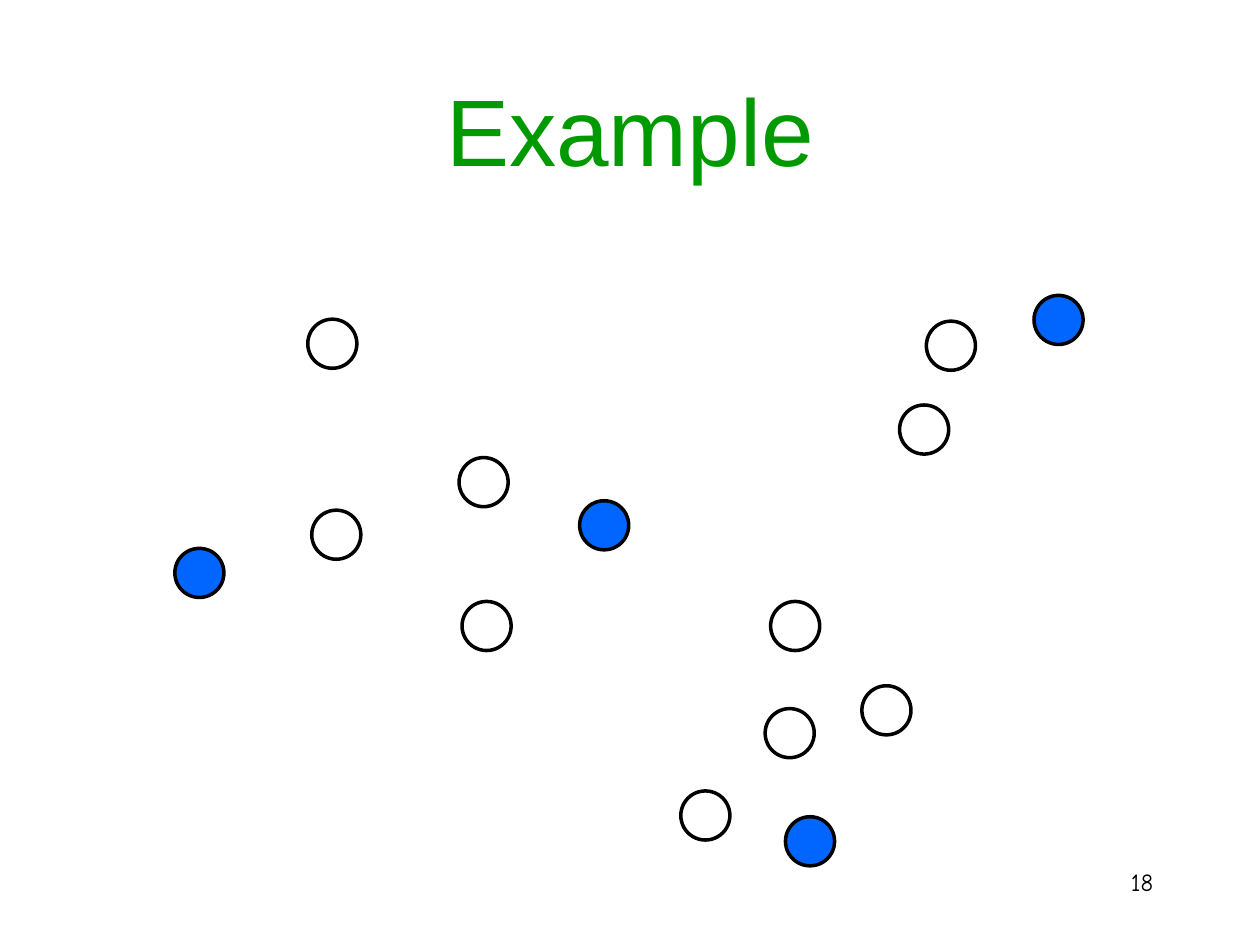
from dataclasses import dataclass

from pptx import Presentation
from pptx.dml.color import RGBColor
from pptx.enum.shapes import MSO_SHAPE
from pptx.enum.text import MSO_ANCHOR, PP_ALIGN
from pptx.util import Cm, Pt

TITLE = "Example"
PAGE_NUMBER = "18"

# Centres of the points, in centimetres
FILLED_POINTS = [(12.18, 10.59), (4.02, 11.55), (16.33, 16.96), (21.34, 6.45)]
OPEN_POINTS = [
    (14.22, 16.44), (19.17, 6.97), (17.87, 14.32), (16.03, 12.62), (15.92, 14.78),
    (6.70, 6.93), (9.75, 9.72), (9.81, 12.62), (18.63, 8.66), (6.78, 10.78),
]
DIAMETER = 0.99


@dataclass(frozen=True)
class Theme:
    background: RGBColor = RGBColor(0xFF, 0xFF, 0xFF)
    title: RGBColor = RGBColor(0x00, 0x99, 0x00)
    ink: RGBColor = RGBColor(0x00, 0x00, 0x00)
    point: RGBColor = RGBColor(0x00, 0x66, 0xFF)
    title_font: str = "Arial"
    number_font: str = "Comic Neue"
    title_size: int = 54
    number_size: int = 14
    outline: int = 2


THEME = Theme()


def add_text(slide, text, box, *, font, size, color, align, anchor=MSO_ANCHOR.TOP):
    """Add a text box; box is left, top, width, height in centimetres."""
    frame = slide.shapes.add_textbox(*map(Cm, box)).text_frame
    frame.word_wrap = True
    frame.vertical_anchor = anchor
    paragraph = frame.paragraphs[0]
    paragraph.alignment = align
    run = paragraph.add_run()
    run.text = text
    run.font.name = font
    run.font.size = Pt(size)
    run.font.color.rgb = color


def add_point(slide, center, fill=None):
    """Draw a circle around its centre, open when no fill is given."""
    left, top = (Cm(value - DIAMETER / 2) for value in center)
    shape = slide.shapes.add_shape(
        MSO_SHAPE.OVAL, left, top, Cm(DIAMETER), Cm(DIAMETER))
    shape.shadow.inherit = False
    if fill is None:
        shape.fill.background()
    else:
        shape.fill.solid()
        shape.fill.fore_color.rgb = fill
    shape.line.color.rgb = THEME.ink
    shape.line.width = Pt(THEME.outline)


def main():
    presentation = Presentation()
    presentation.slide_width, presentation.slide_height = Cm(25.4), Cm(19.05)
    slide = presentation.slides.add_slide(presentation.slide_layouts[6])
    slide.background.fill.solid()
    slide.background.fill.fore_color.rgb = THEME.background

    add_text(slide, TITLE, (1.9, 1, 21.6, 3.18), font=THEME.title_font,
             size=THEME.title_size, color=THEME.title,
             align=PP_ALIGN.CENTER, anchor=MSO_ANCHOR.MIDDLE)
    add_text(slide, PAGE_NUMBER, (18.2, 17.35, 5.3, 1.27), font=THEME.number_font,
             size=THEME.number_size, color=THEME.ink, align=PP_ALIGN.RIGHT)

    for center in FILLED_POINTS:
        add_point(slide, center, THEME.point)
    for center in OPEN_POINTS:
        add_point(slide, center)

    presentation.save("out.pptx")


if __name__ == "__main__":
    main()
